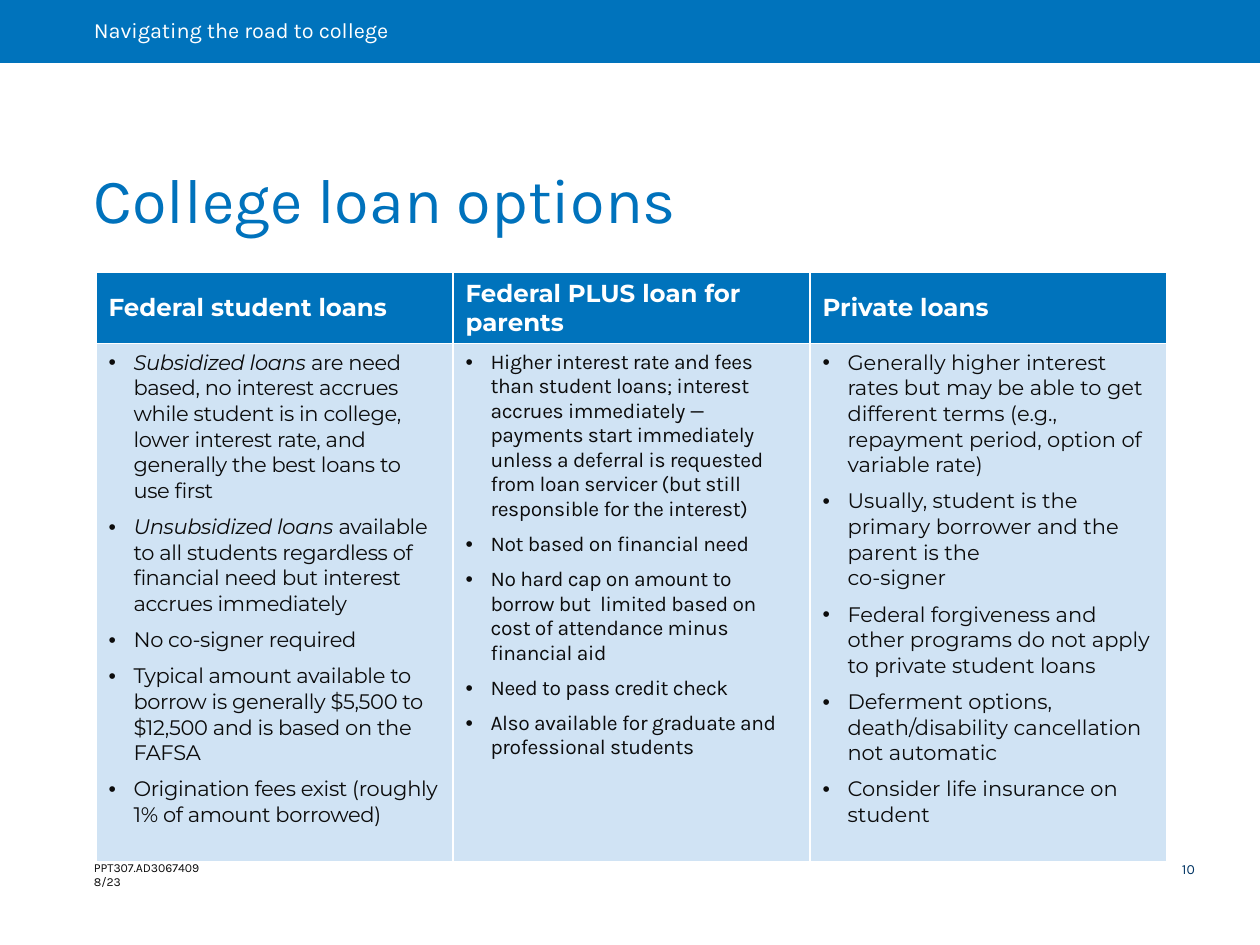
from dataclasses import dataclass

import pptx
import pptx.dml.color
import pptx.enum.shapes
import pptx.enum.text
import pptx.oxml
import pptx.oxml.ns
import pptx.util

EMU_PER_PX = 914400 / 126
BLUE, PALE, INK, NAVY, WHITE = "0073BC", "D0E3F4", "0C0C0C", "003463", "FFFFFF"
ANCHOR = pptx.enum.text.MSO_ANCHOR
LEFT = pptx.enum.text.PP_ALIGN.LEFT


@dataclass
class Label:
    text: str
    box: tuple[int, int, int, int]
    margins: tuple[int, int, int, int]
    size: float
    color: str
    anchor: object = ANCHOR.TOP
    spacing: float = 0.9


@dataclass
class Loan:
    heading: str
    font: str
    tracking: int  # hundredths of a point
    points: list[tuple[str, str]]  # italic lead-in, then plain text


def px(length: int) -> pptx.util.Emu:
    return pptx.util.Emu(round(length * EMU_PER_PX))


def rgb(value: str) -> pptx.dml.color.RGBColor:
    return pptx.dml.color.RGBColor.from_string(value)


def set_all(target, values: dict) -> None:
    for name, value in values.items():
        setattr(target, name, value)


def paint(shape, color: str) -> None:
    shape.fill.solid()
    shape.fill.fore_color.rgb = rgb(color)


def add_run(paragraph, text: str, color: str, **font_values):
    run = paragraph.add_run()
    run.text = text
    set_all(run.font, font_values)
    run.font.color.rgb = rgb(color)
    return run


def fill_label(shape, label: Label) -> None:
    frame = shape.text_frame
    sides = ("margin_left", "margin_top", "margin_right", "margin_bottom")
    set_all(frame, dict(zip(sides, map(px, label.margins))))
    set_all(frame, {"word_wrap": True, "vertical_anchor": label.anchor})
    paragraph = frame.paragraphs[0]
    set_all(paragraph, {"alignment": LEFT, "line_spacing": label.spacing})
    for index, line in enumerate(label.text.split("\n")):
        if index:
            paragraph.add_line_break()
        add_run(paragraph, line, label.color, name="Karla", size=pptx.util.Pt(label.size))


def add_label(slide, label: Label) -> None:
    fill_label(slide.shapes.add_textbox(*map(px, label.box)), label)


def add_banner(slide, label: Label) -> None:
    banner = slide.shapes.add_shape(
        pptx.enum.shapes.MSO_SHAPE.RECTANGLE, *map(px, label.box))
    banner.shadow.inherit = False
    paint(banner, BLUE)
    banner.line.fill.background()
    fill_label(banner, label)


def style_cell(cell, color: str) -> None:
    paint(cell, color)
    properties = cell._tc.get_or_add_tcPr()
    for index, side in enumerate(("lnL", "lnR", "lnT", "lnB")):
        properties.insert(index, pptx.oxml.parse_xml(
            f'<a:{side} {pptx.oxml.ns.nsdecls("a")} w="12700"><a:solidFill>'
            f'<a:srgbClr val="{WHITE}"/></a:solidFill></a:{side}>'))


def add_bullet(paragraph) -> None:
    properties = paragraph._p.get_or_add_pPr()
    indent = px(25)
    properties.set("marL", str(indent))
    properties.set("indent", str(-indent))
    for tag in ('buFont typeface="Arial"', 'buChar char="•"'):
        name, attribute = tag.split(" ", 1)
        properties.append(pptx.oxml.parse_xml(
            f'<a:{name} {pptx.oxml.ns.nsdecls("a")} {attribute}/>'))


def fill_points(cell, loan: Loan) -> None:
    frame = cell.text_frame
    for index, (lead, text) in enumerate(loan.points):
        paragraph = frame.add_paragraph() if index else frame.paragraphs[0]
        add_bullet(paragraph)
        paragraph.alignment = LEFT
        if index:
            paragraph.space_before = pptx.util.Pt(6)
        for part_index, part in enumerate(text.split("\n")):
            if part_index:
                paragraph.add_line_break()
            pieces = [(lead, True), (part, False)] if lead else [(part, False)]
            for words, italic in pieces:
                run = add_run(paragraph, words, INK, name=loan.font, bold=False,
                              italic=italic, size=pptx.util.Pt(12))
                run.font._element.set("spc", str(loan.tracking))


def add_loan_table(slide, loans: list[Loan]) -> None:
    column_width, row_heights = 357, (71, 518)
    table = slide.shapes.add_table(
        2, len(loans), px(96), px(272),
        px(column_width * len(loans)), px(sum(row_heights))).table
    table.horz_banding = False
    for row, height in zip(table.rows, row_heights):
        row.height = px(height)
    for index, loan in enumerate(loans):
        table.columns[index].width = px(column_width)
        heading, body = table.cell(0, index), table.cell(1, index)
        style_cell(heading, BLUE)
        style_cell(body, PALE)
        heading.vertical_anchor = ANCHOR.MIDDLE
        title = heading.text_frame.paragraphs[0]
        title.alignment = LEFT
        add_run(title, loan.heading, WHITE, name="Montserrat", bold=True,
                size=pptx.util.Pt(14))
        fill_points(body, loan)


BANNER = Label("Navigating the road to college", (0, 0, 1260, 63), (94, 0, 28, 0),
               12.4, WHITE, ANCHOR.MIDDLE)
LABELS = [
    Label("PPT307.AD3067409\n8/23", (82, 854, 149, 40), (12, 6, 12, 6), 7, INK, spacing=1.0),
    Label("10", (1166, 857, 63, 26), (16, 5, 5, 5), 8, NAVY),
    Label("College loan options", (80, 207, 1086, 38), (14, 8, 14, 8), 36, "0072BC",
          ANCHOR.BOTTOM),
]
LOANS = [
    Loan("Federal student loans", "Montserrat", -20, [
        ("Subsidized loans ", "are need based, no interest accrues while student is in "
         "college, lower interest rate, and generally the best loans to use first"),
        ("Unsubsidized loans ", "available to all students regardless of financial need "
         "but interest accrues immediately"),
        ("", "No co-signer required"),
        ("", "Typical amount available to borrow is generally $5,500 to $12,500 and is "
         "based on the FAFSA"),
        ("", "Origination fees exist (roughly 1% of amount borrowed)"),
    ]),
    Loan("Federal PLUS loan for parents", "Karla", -20, [
        ("", "Higher interest rate and fees than student loans; interest accrues "
         "immediately — payments start immediately unless a deferral is requested from "
         "loan servicer (but still responsible for the interest)"),
        ("", "Not based on financial need"),
        ("", "No hard cap on amount to borrow but  limited based on cost of attendance "
         "minus financial aid"),
        ("", "Need to pass credit check"),
        ("", "Also available for graduate and professional students"),
    ]),
    Loan("Private loans", "Montserrat", 0, [
        ("", "Generally higher interest rates but may be able to get different terms "
         "(e.g., repayment period, option of variable rate)"),
        ("", "Usually, student is the primary borrower and the parent is the\nco-signer"),
        ("", "Federal forgiveness and other programs do not apply to private student loans"),
        ("", "Deferment options, death/disability cancellation not automatic"),
        ("", "Consider life insurance on student"),
    ]),
]


def main() -> None:
    deck = pptx.Presentation()
    set_all(deck, {"slide_width": px(1260), "slide_height": px(945)})
    slide = deck.slides.add_slide(deck.slide_layouts[6])

    # Top banner, title, footer and page number
    add_banner(slide, BANNER)
    for label in LABELS:
        add_label(slide, label)

    # Loan comparison
    add_loan_table(slide, LOANS)
    deck.save("out.pptx")


if __name__ == "__main__":
    main()
